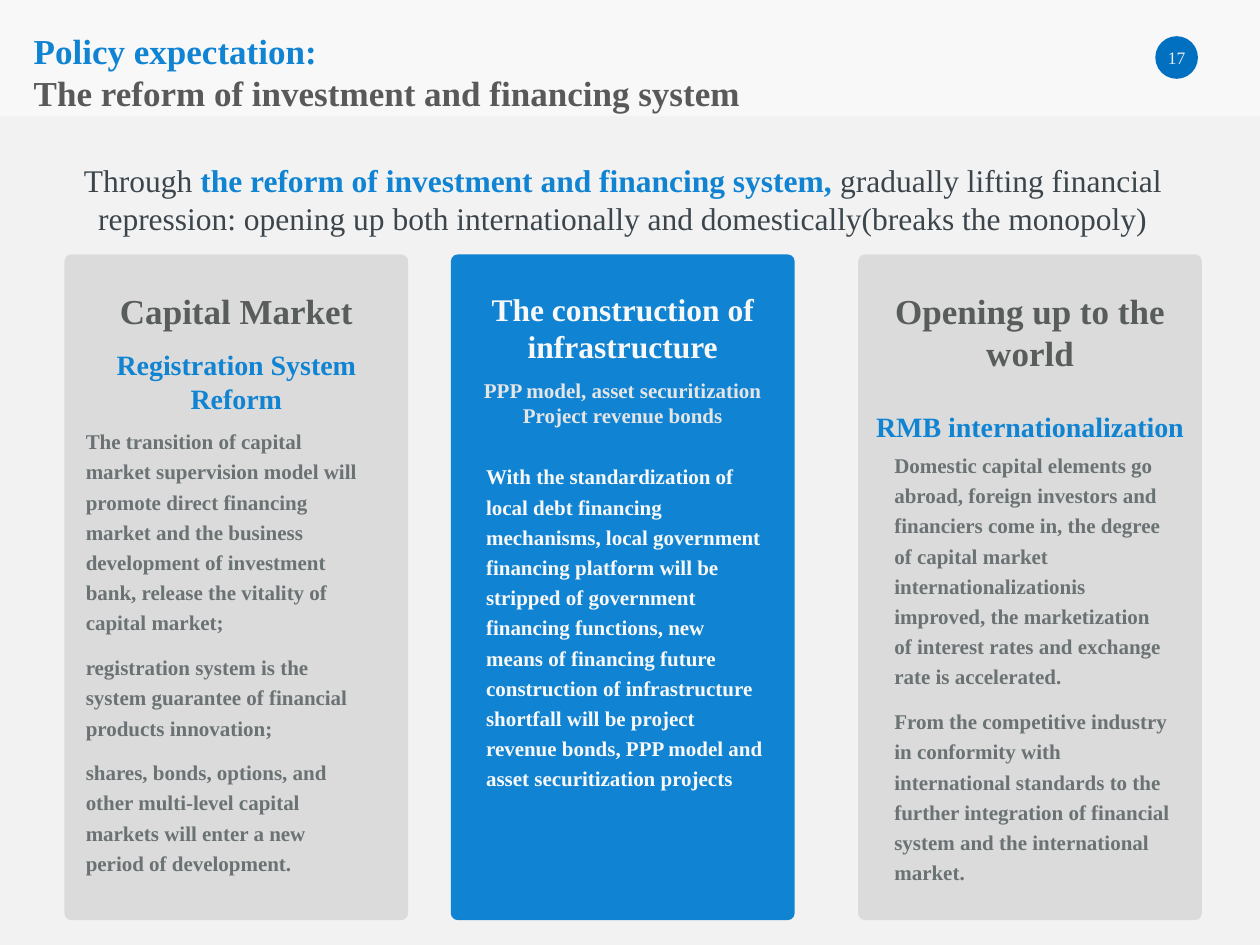
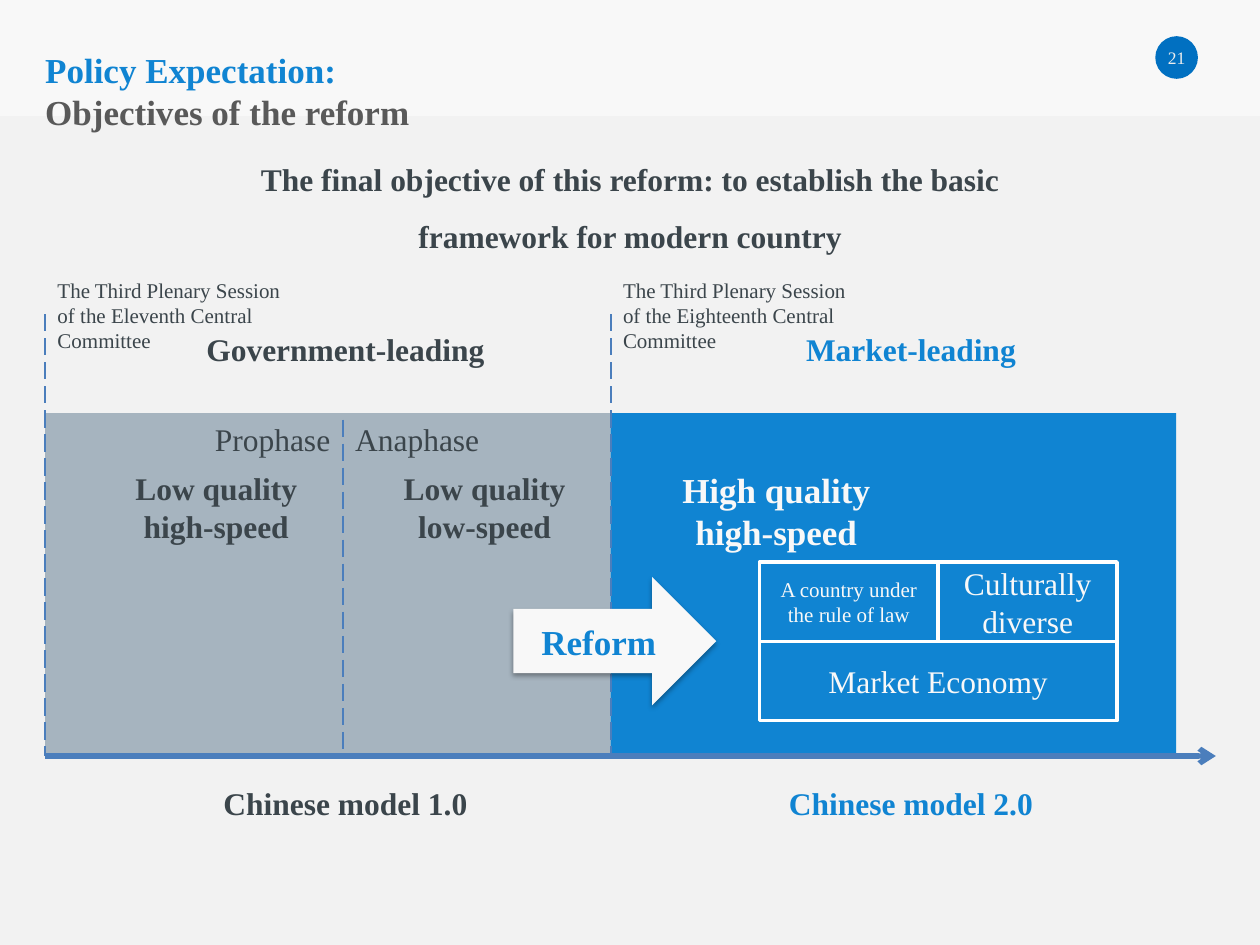
from collections import namedtuple

from lxml.etree import SubElement
from pptx import Presentation
from pptx.dml.color import RGBColor
from pptx.enum.dml import MSO_LINE
from pptx.enum.shapes import MSO_CONNECTOR, MSO_SHAPE
from pptx.enum.text import MSO_ANCHOR, MSO_AUTO_SIZE, PP_ALIGN
from pptx.oxml.ns import qn
from pptx.util import Cm, Pt

FONT = "Times New Roman"
PAPER = RGBColor(0xF2, 0xF2, 0xF2)
BAND = RGBColor(0xF8, 0xF8, 0xF8)
BLUE = RGBColor(0x10, 0x84, 0xD2)
BADGE = RGBColor(0x01, 0x70, 0xC1)
BADGE_TEXT = RGBColor(0xED, 0xED, 0xED)
TITLE_GREY = RGBColor(0x59, 0x59, 0x59)
HEADING_GREY = RGBColor(0x58, 0x5D, 0x5B)
BODY_GREY = RGBColor(0x6B, 0x72, 0x74)
CARD_GREY = RGBColor(0xDB, 0xDB, 0xDB)
PALE = RGBColor(0xE5, 0xE5, 0xE6)
INK = RGBColor(0x3B, 0x45, 0x4B)
ERA_GREY = RGBColor(0xA6, 0xB4, 0xBF)
AXIS = RGBColor(0x4B, 0x7E, 0xBC)
WHITE = RGBColor(0xFF, 0xFF, 0xFF)
BLACK = RGBColor(0, 0, 0)

LEFT, CENTER, RIGHT = PP_ALIGN.LEFT, PP_ALIGN.CENTER, PP_ALIGN.RIGHT
WIDE_INSET, CARD_INSET, NO_INSET = (0.25, 0.13), (0.1, 0.13), (0, 0)

Box = namedtuple("Box", "left top width height")
Line = namedtuple("Line", "text size color bold before", defaults=(False, 0))
Card = namedtuple("Card", "box fill headings body_shift body_color body")


def inner(box, left, top, width, height):
    """Return a box placed relative to the corner of another box."""
    return Box(box.left + left, box.top + top, width, height)


def lengths(box):
    """Return the four measures of a box as lengths."""
    return [Cm(value) for value in box]


def style_font(font, size, color, bold):
    """Format the font of a run."""
    font.name, font.size, font.bold = FONT, Pt(size), bold
    font.color.rgb = color


def set_frame(frame, inset, anchor):
    """Set the wrapping, margins and anchor of a text frame."""
    frame.word_wrap = True
    frame.auto_size = MSO_AUTO_SIZE.NONE
    frame.vertical_anchor = anchor
    frame.margin_left = frame.margin_right = Cm(inset[0])
    frame.margin_top = frame.margin_bottom = Cm(inset[1])


def write(frame, lines, align=CENTER, spacing=1, inset=WIDE_INSET, anchor=MSO_ANCHOR.TOP):
    """Fill a text frame with one formatted paragraph for each line."""
    set_frame(frame, inset, anchor)
    frame.text = "\n".join(line.text for line in lines)
    for para, line in zip(frame.paragraphs, lines):
        para.alignment, para.line_spacing = align, spacing
        if line.before:
            para.space_before = Pt(line.before)
        for span in para.runs:
            style_font(span.font, line.size, line.color, line.bold)


def add_text(page, box, lines, **layout):
    """Add a text box."""
    write(page.shapes.add_textbox(*lengths(box)).text_frame, lines, **layout)


def add_block(page, kind, box, fill, outline=None):
    """Add a filled preset shape without a shadow."""
    shape = page.shapes.add_shape(kind, *lengths(box))
    shape.shadow.inherit = False
    shape.fill.solid()
    shape.fill.fore_color.rgb = fill
    if outline is None:
        shape.line.fill.background()
    else:
        shape.line.color.rgb = outline
        shape.line.width = Pt(2)
    return shape


def add_line(page, start, end, width, dash=None):
    """Add a straight line between two points."""
    line = page.shapes.add_connector(
        MSO_CONNECTOR.STRAIGHT, *[Cm(value) for value in (*start, *end)])
    line.line.color.rgb = AXIS
    line.line.width = Pt(width)
    if dash:
        line.line.dash_style = dash
    SubElement(line._element.spPr, qn("a:effectLst"))
    return line


def add_header(page, box, topic, subject, number):
    """Add the band, the two-line title and the page badge."""
    band = add_block(page, MSO_SHAPE.RECTANGLE, Box(0, 0, 25.4, 2.34), BAND)
    page.shapes._spTree.insert(2, band._element)
    title = page.shapes.title
    title.left, title.top, title.width, title.height = lengths(box)
    write(title.text_frame, [Line(topic, 20, BLUE, True),
                             Line(subject, 20, TITLE_GREY, True)], align=LEFT)
    badge = add_block(page, MSO_SHAPE.OVAL, Box(23.29, 0.73, 0.86, 0.86), BADGE)
    write(badge.text_frame, [Line(number, 10, BADGE_TEXT)],
          inset=NO_INSET, anchor=MSO_ANCHOR.MIDDLE)


def add_lead(page, box):
    """Add the opening sentence with its highlighted phrase."""
    frame = page.shapes.add_textbox(*lengths(box)).text_frame
    set_frame(frame, WIDE_INSET, MSO_ANCHOR.TOP)
    para = frame.paragraphs[0]
    para.alignment = CENTER
    for text, color, bold in (
            ("Through ", INK, False),
            ("the reform of investment and financing system, ", BLUE, True),
            ("gradually lifting financial repression: opening up both "
             "internationally and domestically(breaks the monopoly)", INK, False)):
        span = para.add_run()
        span.text = text
        style_font(span.font, 18, color, bold)


def add_card(page, card):
    """Add a rounded card with centred headings and body text."""
    box = card.box
    panel = add_block(page, MSO_SHAPE.ROUNDED_RECTANGLE, box, card.fill)
    panel.adjustments[0] = 0.02
    add_text(page, inner(box, 0, 0.58, box.width, 3), card.headings, inset=CARD_INSET)
    body = [Line(text, 12, card.body_color, True, 8.3 if index else 0)
            for index, text in enumerate(card.body)]
    add_text(page, inner(box, *card.body_shift, 5.79, 9.2), body,
             align=LEFT, spacing=1.2, inset=CARD_INSET)


def add_era(page, box, fill, accent, session, leading, model):
    """Add one era with its starting line, session and captions."""
    add_block(page, MSO_SHAPE.RECTANGLE, box, fill)
    add_line(page, (box.left, box.top - 2), (box.left, box.top + box.height),
             1.25, MSO_LINE.LONG_DASH)
    add_text(page, inner(box, 0, -2.87, 5.42, 1.8), [Line(session, 12, INK)], align=LEFT)
    for text, shift in ((leading, -1.8), (model, 7.34)):
        add_text(page, inner(box, 2.55, shift, 7.01, 1.02), [Line(text, 18, accent, True)])


def add_phases(page, box):
    """Add the two phases of the first era and their divider."""
    middle = 6
    add_line(page, (box.left + middle, box.top + 0.13),
             (box.left + middle, box.top + box.height), 1.25, MSO_LINE.LONG_DASH)
    for name, left, align in (("Prophase", middle - 4, RIGHT), ("Anaphase", middle, LEFT)):
        add_text(page, inner(box, left, 0, 4, 1.02), [Line(name, 18, INK)], align=align)
    for text, left in (("Low quality high-speed", 1.45), ("Low quality low-speed", 6.86)):
        add_text(page, inner(box, left, 0.99, 4, 1.8), [Line(text, 18, INK, True)])


def add_framework(page, box):
    """Add the outlined blocks of the modern country."""
    half, row = box.width / 2, box.height / 2
    for text, size, left, top, width in (
            ("Market Economy", 18, 0, row, box.width),
            ("A country under the rule of law", 12, 0, 0, half),
            ("Culturally diverse", 18, half, 0, half)):
        block = add_block(page, MSO_SHAPE.RECTANGLE,
                          inner(box, left, top, width, row), BLUE, WHITE)
        write(block.text_frame, [Line(text, size, BAND)], anchor=MSO_ANCHOR.MIDDLE)


def add_reform_arrow(page, box):
    """Add the block arrow with a soft shadow below it."""
    arrow = add_block(page, MSO_SHAPE.RIGHT_ARROW, box, BAND)
    write(arrow.text_frame, [Line("Reform", 20, BLUE, True)], anchor=MSO_ANCHOR.MIDDLE)
    effects = arrow._element.spPr.find(qn("a:effectLst"))
    shadow = SubElement(effects, qn("a:outerShdw"), blurRad=str(Pt(3.1)),
                        dist=str(Pt(1.8)), dir="5400000", rotWithShape="0")
    color = SubElement(shadow, qn("a:srgbClr"), val=str(BLACK))
    SubElement(color, qn("a:alpha"), val="35000")


def add_timeline(page, box):
    """Add both eras, their contents and the time axis."""
    width = box.width / 2
    first = Box(box.left, box.top, width, box.height)
    second = inner(first, width, 0, width, box.height)
    add_era(page, first, ERA_GREY, INK,
            "The Third Plenary Session of the Eleventh Central Committee",
            "Government-leading", "Chinese model 1.0")
    add_era(page, second, BLUE, BLUE,
            "The Third Plenary Session of the Eighteenth Central Committee",
            "Market-leading", "Chinese model 2.0")
    add_phases(page, first)
    add_text(page, inner(second, 1.09, 0.99, 4.5, 1.96),
             [Line("High quality high-speed", 20, BAND, True)])
    add_framework(page, inner(second, 3, 3, 7.21, 3.2))
    bottom = box.top + box.height
    axis = add_line(page, (box.left, bottom), (box.left + 23.6, bottom), 3)
    SubElement(axis.line._get_or_add_ln(), qn("a:tailEnd"), type="arrow")
    add_reform_arrow(page, inner(second, -1.96, 3.3, 4.09, 2.59))


def build_financing(page):
    """Build the slide on the investment and financing system."""
    add_header(page, Box(0.43, 0.46, 21.64, 1.96), "Policy expectation:",
               "The reform of investment and financing system", "17")
    cards = (
        Card(Box(1.3, 5.13, 6.93, 13.42), CARD_GREY,
             [Line("Capital Market", 20, HEADING_GREY, True),
              Line("Registration System Reform", 16, BLUE, True, 9.2)],
             (0.33, 3.28), BODY_GREY,
             ["The transition of capital market supervision model will promote direct "
              "financing market and the business development of investment bank, "
              "release the vitality of capital market;",
              "registration system is the system guarantee of financial products "
              "innovation;",
              "shares, bonds, options, and other multi-level capital markets will "
              "enter a new period of development."]),
        Card(Box(17.3, 5.13, 6.93, 13.42), CARD_GREY,
             [Line("Opening up to the world", 20, HEADING_GREY, True),
              Line("RMB internationalization", 16, BLUE, True, 20.7)],
             (0.63, 3.76), BODY_GREY,
             ["Domestic capital elements go abroad, foreign investors and financiers "
              "come in, the degree of capital market internationalizationis improved, "
              "the marketization of interest rates and exchange rate is accelerated.",
              "From the competitive industry in conformity with international "
              "standards to the further integration of financial system and the "
              "international market."]),
        Card(Box(9.09, 5.13, 6.93, 13.42), BLUE,
             [Line("The construction of infrastructure", 18, BAND, True),
              Line("PPP model, asset securitization", 12, PALE, True, 6.9),
              Line("Project revenue bonds", 12, PALE, True)],
             (0.61, 3.99), BAND,
             ["With the standardization of local debt financing mechanisms, local "
              "government financing platform will be stripped of government financing "
              "functions, new means of financing future construction of "
              "infrastructure shortfall will be project revenue bonds, PPP model and "
              "asset securitization projects"]))
    for card in cards:
        add_card(page, card)
    add_lead(page, Box(1.09, 3.12, 22.94, 1.8))


def build_objectives(page):
    """Build the slide on the objectives of the reform."""
    add_header(page, Box(0.66, 0.84, 21.64, 1.96), "Policy Expectation:",
               "Objectives of the reform", "21")
    add_timeline(page, Box(0.91, 8.33, 22.8, 6.91))
    add_text(page, Box(4.55, 2.72, 16.31, 2.44),
             [Line("The final objective of this reform: to establish the basic "
                   "framework for modern country", 18, INK, True)], spacing=1.5)


def main():
    """Build and save the deck."""
    deck = Presentation()
    deck.slide_width, deck.slide_height = Cm(25.4), Cm(19.05)
    backdrop = deck.slide_master.background.fill
    backdrop.solid()
    backdrop.fore_color.rgb = PAPER
    for build in (build_financing, build_objectives):
        build(deck.slides.add_slide(deck.slide_layouts[5]))
    deck.save("out.pptx")


if __name__ == "__main__":
    main()
